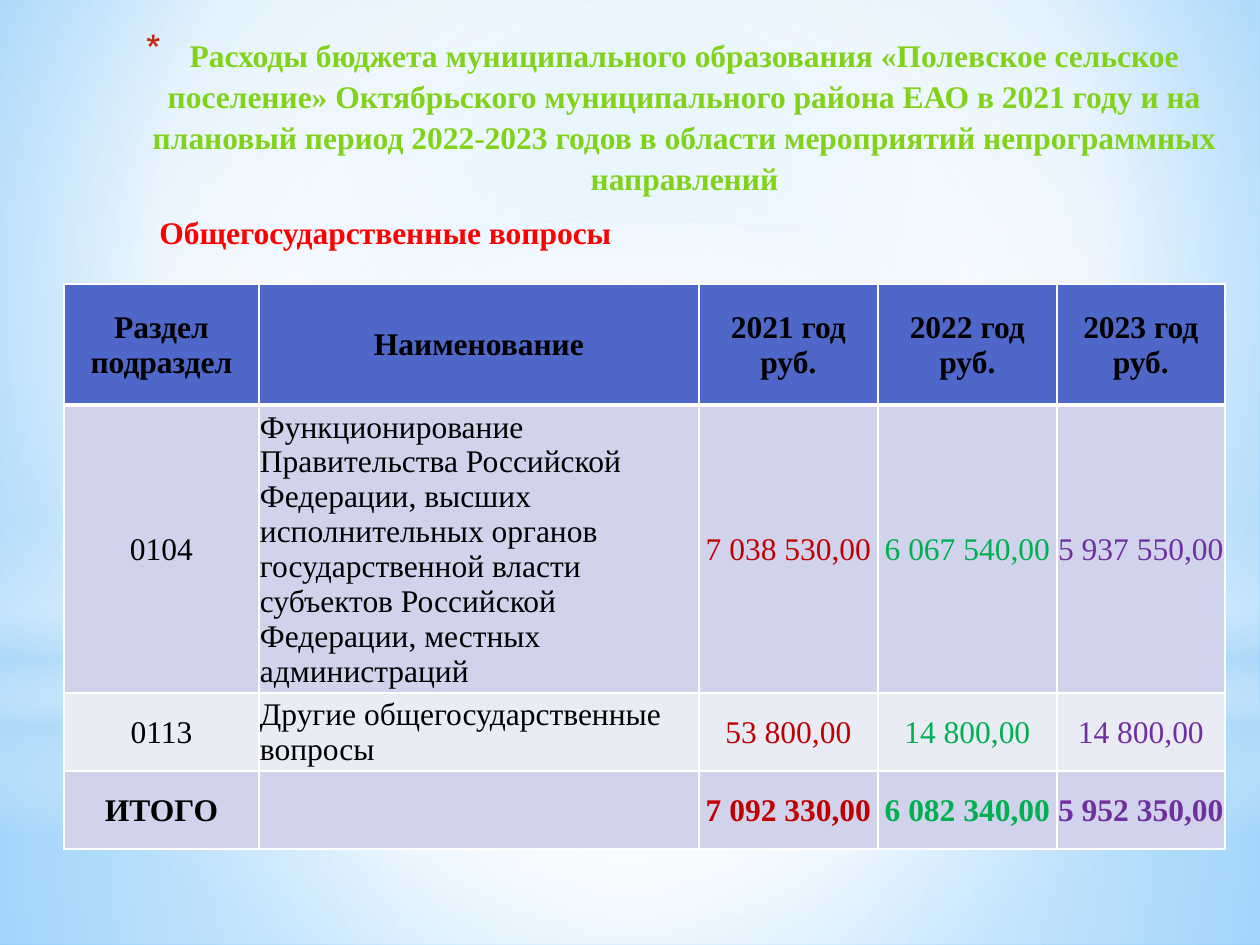
from dataclasses import dataclass

from lxml import etree
from pptx import Presentation
from pptx.dml.color import RGBColor
from pptx.enum.shapes import MSO_SHAPE
from pptx.enum.text import MSO_ANCHOR, MSO_AUTO_SIZE, PP_ALIGN
from pptx.oxml import parse_xml
from pptx.oxml.ns import qn
from pptx.util import Pt

RECT, OVAL = MSO_SHAPE.RECTANGLE, MSO_SHAPE.OVAL
LEFT, CENTER = PP_ALIGN.LEFT, PP_ALIGN.CENTER
TOP, MIDDLE = MSO_ANCHOR.TOP, MSO_ANCHOR.MIDDLE
NO_AUTOFIT = MSO_AUTO_SIZE.NONE
DRAWING_NS = "http://schemas.openxmlformats.org/drawingml/2006/main"
EMU_PER_PX = 914400 / 126
FONT = "Times New Roman"

COLORS = {
    "sky": "9ED5FF", "deep_sky": "5BB9FF", "haze": "B4DCFA", "white": "FFFFFF",
    "title": "81D31A", "bullet": "C3260C", "subtitle": "FF0000", "text": "000000",
    "2021": "C00000", "2022": "00B050", "2023": "7030A0",
    "header": "4E67C8", "band": "D0D3EB", "light_band": "E9EBF5",
}


@dataclass(frozen=True)
class Stop:
    position: int
    color: str
    opacity: int = 100


@dataclass(frozen=True)
class Glow:
    shape: int
    box: tuple[int, int, int, int]
    stops: tuple[Stop, ...]
    radial: bool = True


@dataclass(frozen=True)
class Column:
    width: int
    align: int
    color: str


@dataclass(frozen=True)
class Row:
    height: int
    fill: str
    bold: bool
    texts: tuple[str, ...]


GLOWS = (
    Glow(RECT, (0, 703, 1260, 242),
         (Stop(0, "white", 91), Stop(37, "white", 76), Stop(100, "haze", 79))),
    Glow(RECT, (0, 0, 1260, 703),
         (Stop(0, "white", 89), Stop(48, "white", 62), Stop(100, "haze", 79))),
    Glow(RECT, (0, 519, 1260, 315),
         (Stop(0, "white", 0), Stop(29, "white", 30), Stop(45, "haze", 40),
          Stop(55, "white", 26), Stop(65, "haze", 60), Stop(100, "white", 0)), False),
    Glow(OVAL, (0, 220, 1260, 703), (Stop(0, "white"), Stop(56, "white", 0))),
)

COLUMNS = (
    Column(195, CENTER, "text"),
    Column(440, LEFT, "text"),
    Column(179, CENTER, "2021"),
    Column(179, CENTER, "2022"),
    Column(168, CENTER, "2023"),
)

ROWS = (
    Row(121, "header", True, ("Раздел подраздел", "Наименование", "2021 год\nруб.",
                              "2022 год\nруб.", "2023 год\nруб.")),
    Row(288, "band", False,
        ("0104", "Функционирование Правительства Российской Федерации, высших "
         "исполнительных органов государственной власти субъектов Российской "
         "Федерации, местных администраций",
         "7 038 530,00", "6 067 540,00", "5 937 550,00")),
    Row(78, "light_band", False, ("0113", "Другие общегосударственные вопросы",
                                  "53 800,00", "14 800,00", "14 800,00")),
    Row(78, "band", True, ("ИТОГО", "", "7 092 330,00", "6 082 340,00", "5 952 350,00")),
)

TITLE = ("Расходы бюджета муниципального образования «Полевское сельское поселение» "
         "Октябрьского муниципального района ЕАО в 2021 году и на плановый период "
         "2022-2023 годов в области мероприятий непрограммных направлений")


def px(length: float) -> int:
    return round(length * EMU_PER_PX)


def rgb(name: str) -> RGBColor:
    return RGBColor.from_string(COLORS[name])


def set_all(target, values: dict) -> None:
    for name, value in values.items():
        setattr(target, name, value)


def set_gradient(properties, stops: tuple[Stop, ...], center: tuple | None) -> None:
    marks = "".join(
        f'<a:gs pos="{stop.position * 1000}"><a:srgbClr val="{COLORS[stop.color]}">'
        f'<a:alpha val="{stop.opacity * 1000}"/></a:srgbClr></a:gs>' for stop in stops)
    if center:
        sides = " ".join(f'{side}="{value * 1000}"' for side, value in zip("ltrb", center))
        shade = f'<a:path path="circle"><a:fillToRect {sides}/></a:path>'
    else:
        shade = '<a:lin ang="5400000" scaled="0"/>'
    gradient = parse_xml(f'<a:gradFill xmlns:a="{DRAWING_NS}" rotWithShape="1">'
                         f'<a:gsLst>{marks}</a:gsLst>{shade}</a:gradFill>')
    solid = properties.find(qn("a:solidFill"))
    properties.replace(solid, gradient)


def add_glow(slide, glow: Glow) -> None:
    shape = slide.shapes.add_shape(glow.shape, *map(px, glow.box))
    shape.shadow.inherit = False
    shape.line.fill.background()
    shape.fill.solid()
    set_gradient(shape.element.spPr, glow.stops, (50, 50, 50, 50) if glow.radial else None)


def write(frame, text: str, color: str, align: int, bold: bool) -> None:
    frame.text = text
    for paragraph in frame.paragraphs:
        paragraph.alignment = align
        for run in paragraph.runs:
            set_all(run.font, {"name": FONT, "size": Pt(18), "bold": bold})
            run.font.color.rgb = rgb(color)


def set_borders(cell, widths: dict[str, int]) -> None:
    properties = cell._tc.get_or_add_tcPr()
    for index, (side, points) in enumerate(widths.items()):
        properties.insert(index, parse_xml(
            f'<a:ln{side} xmlns:a="{DRAWING_NS}" w="{Pt(points)}"><a:solidFill>'
            f'<a:srgbClr val="{COLORS["white"]}"/></a:solidFill></a:ln{side}>'))


def add_title(slide) -> None:
    title = slide.shapes.title
    set_all(title, {"left": px(94), "top": px(26), "width": px(1137), "height": px(180)})
    frame = title.text_frame
    set_all(frame, {"auto_size": NO_AUTOFIT, "vertical_anchor": TOP, "word_wrap": True})
    write(frame, TITLE, "title", CENTER, True)
    paragraph = frame.paragraphs[0]
    paragraph.line_spacing = 1.09
    properties = paragraph._p.get_or_add_pPr()
    properties.set("marL", str(px(44)))
    properties.set("indent", str(-px(44)))
    bullet_color = etree.SubElement(properties, qn("a:buClr"))
    etree.SubElement(bullet_color, qn("a:srgbClr"), val=COLORS["bullet"])
    etree.SubElement(properties, qn("a:buSzPct"), val="128000")
    etree.SubElement(properties, qn("a:buChar"), char="*")
    title.element.getparent().append(title.element)


def add_expenses(slide) -> None:
    width = sum(column.width for column in COLUMNS)
    height = sum(row.height for row in ROWS)
    table = slide.shapes.add_table(
        len(ROWS), len(COLUMNS), px(64), px(284), px(width), px(height)).table
    set_all(table, {"first_row": False, "horz_banding": False})
    for index, column in enumerate(COLUMNS):
        table.columns[index].width = px(column.width)
    for row_index, row in enumerate(ROWS):
        table.rows[row_index].height = px(row.height)
        is_header = row_index == 0
        for column_index, (column, text) in enumerate(zip(COLUMNS, row.texts)):
            cell = table.cell(row_index, column_index)
            set_all(cell, {"margin_left": px(1), "margin_right": px(1), "margin_top": px(1),
                           "margin_bottom": 0, "vertical_anchor": MIDDLE})
            write(cell.text_frame, text, "text" if is_header else column.color,
                  CENTER if is_header else column.align, row.bold)
            cell.fill.solid()
            cell.fill.fore_color.rgb = rgb(row.fill)
            set_borders(cell, {"L": 1, "R": 1, "T": 3 if row_index == 1 else 1,
                               "B": 3 if is_header else 1})


def main() -> None:
    deck = Presentation()
    set_all(deck, {"slide_width": px(1260), "slide_height": px(945)})
    slide = deck.slides.add_slide(deck.slide_layouts[5])
    slide.background.fill.solid()
    set_gradient(next(slide.element.iter(qn("p:bgPr"))),
                 (Stop(0, "sky"), Stop(60, "white"), Stop(100, "deep_sky")),
                 (20, 10, 20, 60))
    for glow in GLOWS:
        add_glow(slide, glow)
    subtitle = slide.shapes.add_textbox(px(147), px(207), px(483), px(50))
    subtitle.text_frame.word_wrap = False
    write(subtitle.text_frame, "Общегосударственные вопросы", "subtitle", LEFT, True)
    add_title(slide)
    add_expenses(slide)
    deck.save("out.pptx")


if __name__ == "__main__":
    main()
